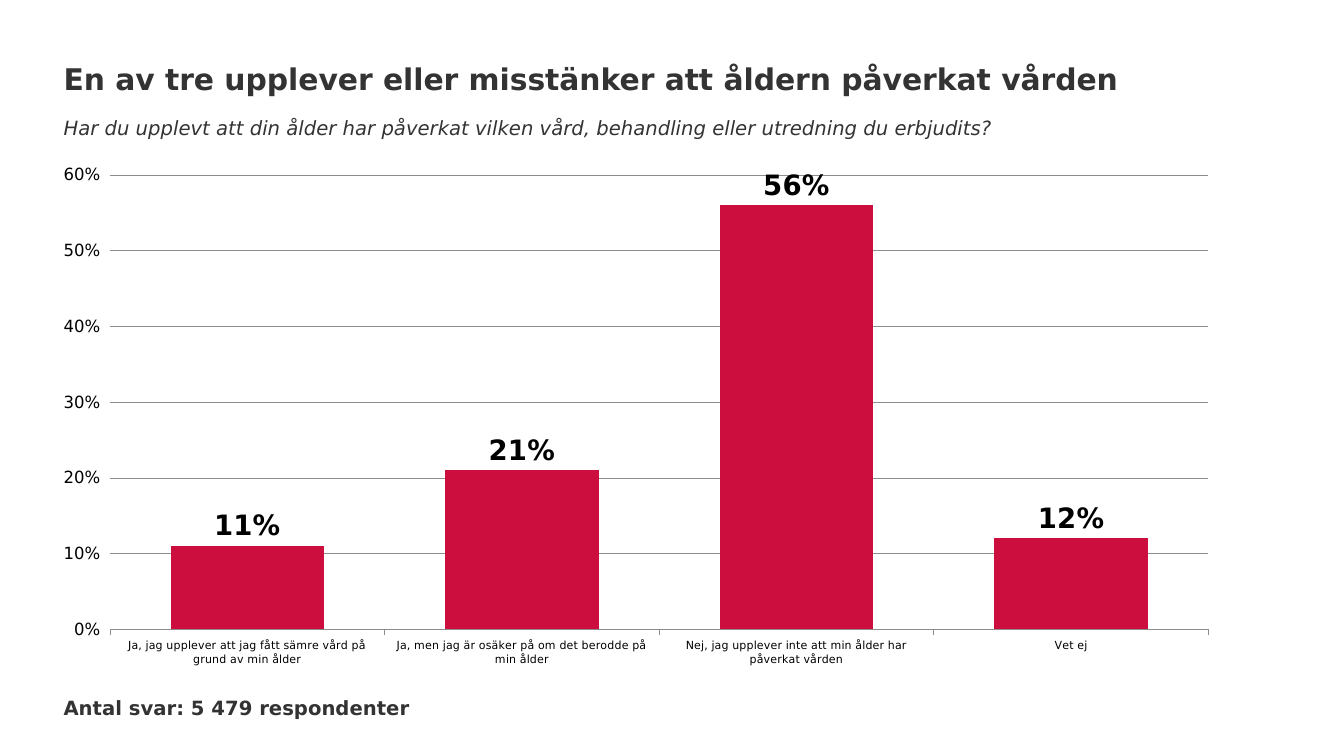
from dataclasses import dataclass

from lxml import etree
from pptx import Presentation
from pptx.chart.chart import Chart
from pptx.chart.data import CategoryChartData
from pptx.dml.color import RGBColor
from pptx.enum.chart import (
    XL_AXIS_CROSSES,
    XL_CHART_TYPE,
    XL_LABEL_POSITION,
    XL_TICK_LABEL_POSITION,
    XL_TICK_MARK,
)
from pptx.enum.text import MSO_ANCHOR, MSO_AUTO_SIZE, PP_ALIGN
from pptx.oxml.ns import qn
from pptx.shapes.autoshape import Shape
from pptx.slide import Slide
from pptx.text.text import Font
from pptx.util import Pt

COLUMN_CLUSTERED = XL_CHART_TYPE.COLUMN_CLUSTERED
CROSS_MAXIMUM = XL_AXIS_CROSSES.MAXIMUM
LABEL_OUTSIDE_END = XL_LABEL_POSITION.OUTSIDE_END
TICK_LABELS_LOW = XL_TICK_LABEL_POSITION.LOW
TICK_OUTSIDE = XL_TICK_MARK.OUTSIDE
ANCHOR_TOP = MSO_ANCHOR.TOP
NO_AUTO_SIZE = MSO_AUTO_SIZE.NONE
ALIGN_LEFT = PP_ALIGN.LEFT

FONT_NAME = "DejaVu Sans"
COLORS = {"text": "333333", "chart_text": "000000", "bar": "CB0E3E", "line": "8C8C8C"}
LEFT = 45.4
WIDTH = 869
PERCENT = "0%"
TITLE_ONLY_LAYOUT = 5
ANSWERS = {
    "Ja, jag upplever att jag fått sämre vård på grund av min ålder": 0.11,
    "Ja, men jag är osäker på om det berodde på min ålder": 0.21,
    "Nej, jag upplever inte att min ålder har påverkat vården": 0.56,
    "Vet ej": 0.12,
}
PLOT_AREA = {"x": 0.02, "y": 0.04, "w": 0.92, "h": 0.87}


@dataclass(frozen=True)
class TextLine:
    text: str
    top: float
    height: float
    size: float
    width: float = WIDTH
    bold: bool = False
    italic: bool = False


TITLE = TextLine(
    "En av tre upplever eller misstänker att åldern påverkat vården",
    43.2, 25.9, 21.3, bold=True,
)
CAPTIONS = (
    TextLine(
        "Har du upplevt att din ålder har påverkat vilken vård, "
        "behandling eller utredning du erbjudits?",
        82.8, 33.8, 14, italic=True,
    ),
    TextLine("Antal svar: 5 479 respondenter", 496.8, 17.3, 14, width=282.2, bold=True),
)


def style_font(
    font: Font, size: float, color: str, bold: bool = False, italic: bool = False
) -> None:
    font.name = FONT_NAME
    font.size = Pt(size)
    font.bold = bold
    font.italic = italic
    font.color.rgb = RGBColor.from_string(COLORS[color])


def write_line(shape: Shape, line: TextLine) -> None:
    shape.left, shape.top = Pt(LEFT), Pt(line.top)
    shape.width, shape.height = Pt(line.width), Pt(line.height)
    frame = shape.text_frame
    frame.margin_left = frame.margin_top = frame.margin_right = frame.margin_bottom = 0
    frame.word_wrap = True
    frame.auto_size = NO_AUTO_SIZE
    frame.vertical_anchor = ANCHOR_TOP
    paragraph = frame.paragraphs[0]
    paragraph.alignment = ALIGN_LEFT
    run = paragraph.add_run()
    run.text = line.text
    style_font(run.font, line.size, "text", line.bold, line.italic)


def place_plot_area(chart: Chart) -> None:
    plot_area = chart.element.find(f".//{qn('c:plotArea')}")
    layout = plot_area.find(qn("c:layout"))
    if layout is None:
        layout = etree.Element(qn("c:layout"))
        plot_area.insert(0, layout)
    manual = etree.SubElement(layout, qn("c:manualLayout"))
    settings = {"layoutTarget": "inner", "xMode": "edge", "yMode": "edge", **PLOT_AREA}
    for tag, value in settings.items():
        etree.SubElement(manual, qn(f"c:{tag}")).set("val", str(value))


def add_answer_chart(slide: Slide) -> None:
    data = CategoryChartData(number_format=PERCENT)
    data.categories = list(ANSWERS)
    data.add_series("Series 1", list(ANSWERS.values()))
    chart = slide.shapes.add_chart(
        COLUMN_CLUSTERED, Pt(LEFT), Pt(110.2), Pt(WIDTH), Pt(373), data
    ).chart
    chart.has_legend = False
    chart.has_title = False
    style_font(chart.font, 12, "chart_text")
    place_plot_area(chart)

    category_axis = chart.category_axis
    category_axis.tick_label_position = TICK_LABELS_LOW
    category_axis.crosses = CROSS_MAXIMUM
    style_font(category_axis.tick_labels.font, 8, "chart_text")

    value_axis = chart.value_axis
    value_axis.minimum_scale = 0
    value_axis.maximum_scale = 0.6
    value_axis.major_unit = 0.1
    value_axis.has_major_gridlines = True
    value_axis.format.line.fill.background()
    value_axis.tick_labels.number_format = PERCENT
    value_axis.tick_labels.number_format_is_linked = False
    style_font(value_axis.tick_labels.font, 12, "chart_text")

    for axis in (category_axis, value_axis):
        axis.major_tick_mark = TICK_OUTSIDE
    for line in (category_axis.format.line, value_axis.major_gridlines.format.line):
        line.width = Pt(0.5)
        line.color.rgb = RGBColor.from_string(COLORS["line"])

    plot = chart.plots[0]
    plot.gap_width = 79
    plot.vary_by_categories = False
    series = plot.series[0]
    series.format.fill.solid()
    series.format.fill.fore_color.rgb = RGBColor.from_string(COLORS["bar"])
    labels = series.data_labels
    labels.show_value = True
    labels.position = LABEL_OUTSIDE_END
    labels.number_format = PERCENT
    labels.number_format_is_linked = False
    style_font(labels.font, 20, "chart_text", bold=True)


def main() -> None:
    presentation = Presentation()
    presentation.slide_width = Pt(960)
    presentation.slide_height = Pt(540)
    slide = presentation.slides.add_slide(presentation.slide_layouts[TITLE_ONLY_LAYOUT])
    add_answer_chart(slide)
    write_line(slide.shapes.title, TITLE)
    for caption in CAPTIONS:
        write_line(slide.shapes.add_textbox(0, 0, 0, 0), caption)
    presentation.save("out.pptx")


if __name__ == "__main__":
    main()
